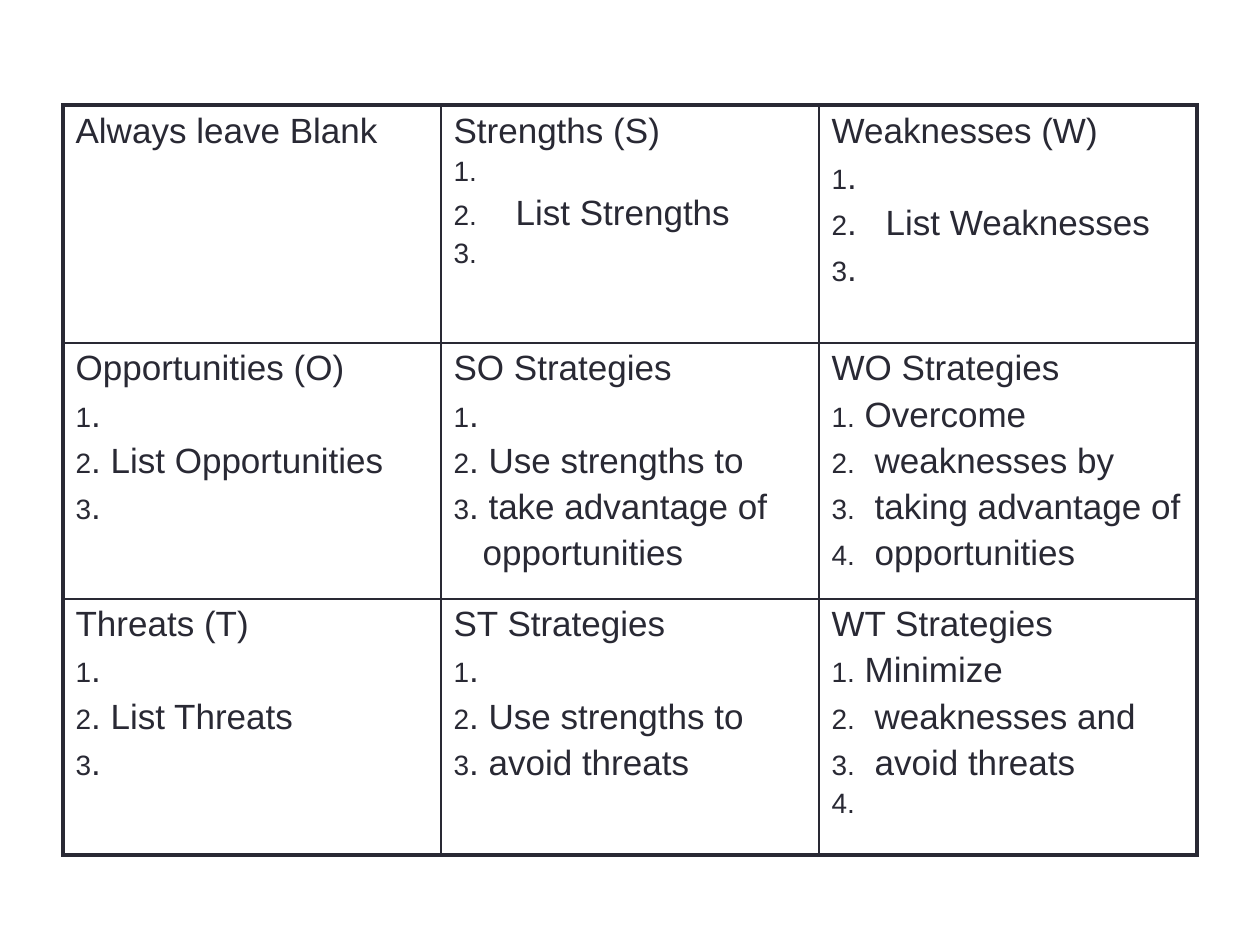
from lxml import etree
from pptx import Presentation
from pptx.dml.color import RGBColor
from pptx.oxml.ns import qn
from pptx.util import Emu, Pt

WIDE, HIGH = 1260, 945
LEFT, TOP = 63, 105
COLS = [378, 378, 378]
ROWS = [238, 256, 256]
INK = "292934"
FONT = "Arial"
BIG, SMALL = 20, 16
THICK, THIN = 2.25, 1

# Each cell: heading, tab stop in px (0 for none), lines of (small text, big text)
CELLS = [
    [
        ("Always leave Blank", 0, []),
        ("Strengths (S)", 62, [("1.", ""), ("2.", "\tList Strengths"), ("3.", "")]),
        ("Weaknesses (W)", 54, [("1", "."), ("2", ".\tList Weaknesses"), ("3", ".")]),
    ],
    [
        ("Opportunities (O)", 0, [("1", "."), ("2", ". List Opportunities"), ("3", ".")]),
        ("SO Strategies", 29, [("1", "."), ("2", ". Use strengths to"),
                               ("3", ". take advantage of"), ("", "\topportunities")]),
        ("WO Strategies", 43, [("1.", " Overcome"), ("2.", "\tweaknesses by"),
                               ("3.", "\ttaking advantage of"), ("4.", "\topportunities")]),
    ],
    [
        ("Threats (T)", 0, [("1", "."), ("2", ". List Threats"), ("3", ".")]),
        ("ST Strategies", 0, [("1", "."), ("2", ". Use strengths to"),
                              ("3", ". avoid threats")]),
        ("WT Strategies", 43, [("1.", " Minimize"), ("2.", "\tweaknesses and"),
                               ("3.", "\tavoid threats"), ("4.", "")]),
    ],
]


def px(n):
    return Emu(round(n * 914400 / 126))


def color(code):
    return RGBColor.from_string(code)


def add(parent, tag, **attrs):
    node = etree.SubElement(parent, qn(tag))
    for key, val in attrs.items():
        node.set(key, str(val))
    return node


def add_text(para, text, size):
    run = para.add_run()
    run.text = text
    run.font.name = FONT
    run.font.size = Pt(size)
    run.font.color.rgb = color(INK)


def space(para, tab):
    """Put a fifth of a line before the paragraph, and set its tab stop."""
    props = para._p.get_or_add_pPr()
    add(add(props, "a:spcBef"), "a:spcPct", val=20000)
    if tab:
        add(add(props, "a:tabLst"), "a:tab", pos=px(tab), algn="l")


def border(cell, row, col):
    props = cell._tc.get_or_add_tcPr()
    edges = [("L", col == 0), ("R", col == len(COLS) - 1),
             ("T", row == 0), ("B", row == len(ROWS) - 1)]
    for side, outer in edges:
        line = add(props, "a:ln" + side, w=Pt(THICK if outer else THIN))
        add(add(line, "a:solidFill"), "a:srgbClr", val=INK)


def fill_cell(cell, head, tab, lines):
    frame = cell.text_frame
    add_text(frame.paragraphs[0], head, BIG)
    for small, big in lines:
        para = frame.add_paragraph()
        space(para, tab if "\t" in big else 0)
        for text, size in ((small, SMALL), (big, BIG)):
            if text:
                add_text(para, text, size)


def main():
    deck = Presentation()
    deck.slide_width, deck.slide_height = px(WIDE), px(HIGH)
    slide = deck.slides.add_slide(deck.slide_layouts[6])
    table = slide.shapes.add_table(len(ROWS), len(COLS), px(LEFT), px(TOP),
                                   px(sum(COLS)), px(sum(ROWS))).table
    table.first_row = table.horz_banding = False
    for col, wide in enumerate(COLS):
        table.columns[col].width = px(wide)
    for row, high in enumerate(ROWS):
        table.rows[row].height = px(high)
        for col, content in enumerate(CELLS[row]):
            cell = table.cell(row, col)
            border(cell, row, col)
            cell.fill.background()
            fill_cell(cell, *content)
    deck.save("out.pptx")


if __name__ == "__main__":
    main()
